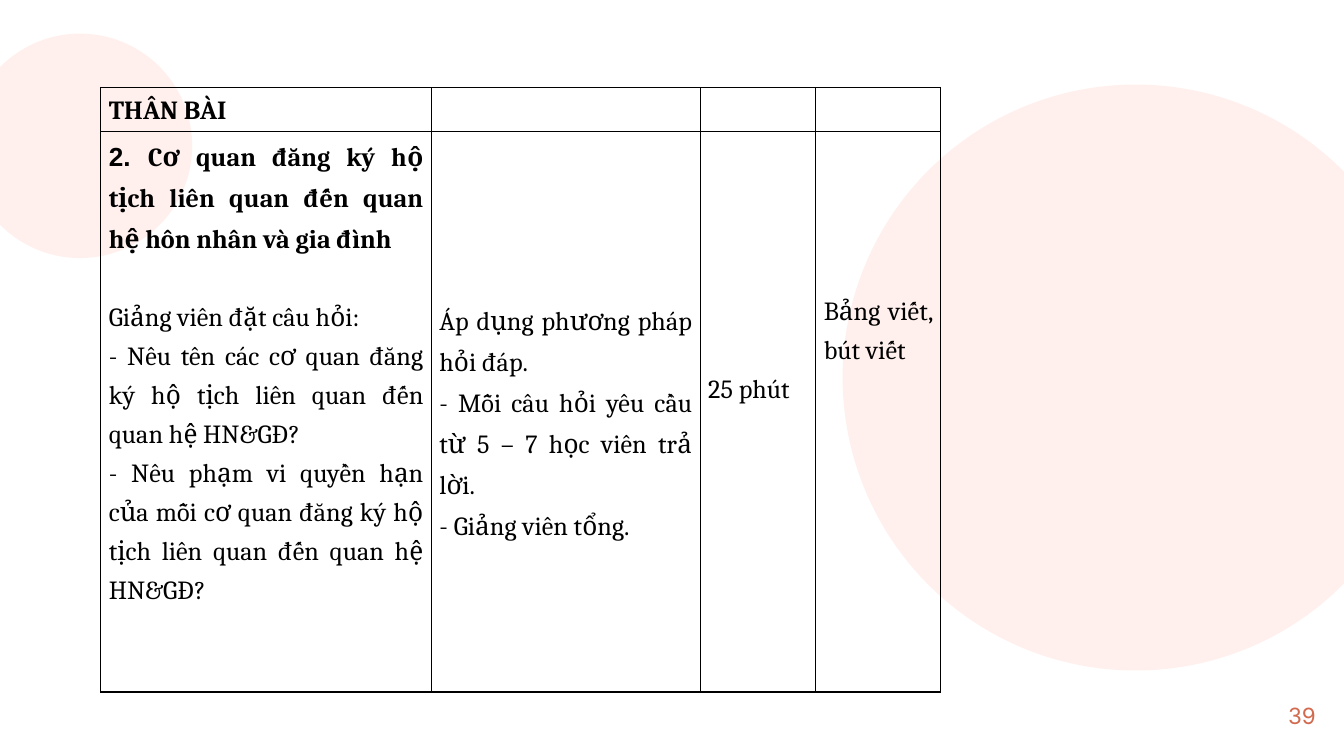
from lxml import etree
from pptx import Presentation
from pptx.dml.color import RGBColor
from pptx.enum.shapes import MSO_SHAPE
from pptx.enum.text import MSO_ANCHOR, PP_ALIGN
from pptx.oxml.ns import qn
from pptx.util import Inches, Pt

CHORD = MSO_SHAPE.CHORD
MIDDLE = MSO_ANCHOR.MIDDLE
RIGHT = PP_ALIGN.RIGHT
JUSTIFY = PP_ALIGN.JUSTIFY
EXACT = Pt(22)


def color(code):
    """Turn a hex string into a colour."""
    return RGBColor.from_string(code)


def write(para, text, size=14, font="Cambria", ink="000000", bold=False,
          align=JUSTIFY, line=1.3, before=0):
    """Add a formatted run to a paragraph."""
    para.alignment = align
    para.line_spacing = line
    para.space_before = Pt(before)
    run = para.add_run()
    run.text = text
    run.font.size = Pt(size)
    run.font.name = font
    run.font.bold = bold
    run.font.color.rgb = color(ink)


class Deck:
    """Hold the style and the current slide."""

    tint = "FFF0ED"
    accent = "D26A50"
    border = "000000"

    def __init__(self):
        """Start a wide deck with one blank slide."""
        self.file = Presentation()
        self.file.slide_width = Inches(10)
        self.file.slide_height = Inches(10) * 9 // 16
        self.slide = self.file.slides.add_slide(self.file.slide_layouts[6])

    def disc(self, left, top, size, turn=0):
        """Draw a circle cut flat at the slide edge."""
        shape = self.slide.shapes.add_shape(
            CHORD, Inches(left), Inches(top), Inches(size), Inches(size))
        shape.adjustments[0] = 26.74
        shape.adjustments[1] = 189.22
        shape.rotation = turn
        shape.shadow.inherit = False
        shape.fill.solid()
        shape.fill.fore_color.rgb = color(self.tint)
        shape.line.fill.background()

    def number(self, text):
        """Write the slide number."""
        box = self.slide.shapes.add_textbox(
            Inches(9.19), Inches(5.11), Inches(0.6), Inches(0.43))
        frame = box.text_frame
        frame.word_wrap = True
        frame.vertical_anchor = MIDDLE
        frame.margin_left = frame.margin_right = 0
        frame.margin_top = frame.margin_bottom = 0
        write(frame.paragraphs[0], text, size=12, font="Inter",
              ink=self.accent, align=RIGHT, line=1.0)

    def table(self, left, top, cols, rows):
        """Add a bordered table without fill."""
        grid = self.slide.shapes.add_table(
            len(rows), len(cols), Inches(left), Inches(top),
            Inches(sum(cols)), Inches(sum(rows))).table
        grid.first_row = grid.horz_banding = False
        for col, width in zip(grid.columns, cols):
            col.width = Inches(width)
        for row, height in zip(grid.rows, rows):
            row.height = Inches(height)
        for cell in grid.iter_cells():
            cell.margin_left = cell.margin_right = Inches(0.06)
            cell.margin_top = cell.margin_bottom = 0
            cell.fill.background()
            self.frame(cell)
        return grid

    def frame(self, cell):
        """Draw the four borders of a cell."""
        props = cell._tc.get_or_add_tcPr()
        for spot, side in enumerate(("lnL", "lnR", "lnT", "lnB")):
            edge = etree.Element(qn(f"a:{side}"), w=str(Pt(0.75)))
            fill = etree.SubElement(edge, qn("a:solidFill"))
            etree.SubElement(fill, qn("a:srgbClr"), val=self.border)
            props.insert(spot, edge)

    def fill(self, cell, paras, drop=0):
        """Write paragraphs of (text, format) runs below a top gap."""
        cell.margin_top = Inches(drop)
        frame = cell.text_frame
        for spot, runs in enumerate(paras):
            para = frame.add_paragraph() if spot else frame.paragraphs[0]
            for text, style in runs:
                write(para, text, **style)


def main():
    """Build the lesson plan slide."""
    deck = Deck()
    deck.disc(6.27, 0.63, 4.36)
    deck.disc(-0.24, 0.25, 1.67, turn=180)
    deck.number("39")

    grid = deck.table(0.75, 0.65, [2.46, 2, 0.86, 0.93], [0.33, 4.17])
    head = {"bold": True, "line": EXACT}
    fixed = {"line": EXACT}
    deck.fill(grid.cell(0, 0), [[("THÂN BÀI", {"bold": True})]])
    deck.fill(grid.cell(1, 0), [
        [("2. ", {**head, "font": "Arial"}),
         ("Cơ quan đăng ký hộ tịch liên quan đến quan hệ hôn nhân "
          "và gia đình", head)],
        [("Giảng viên đặt câu hỏi: ", {"before": 21})],
        [("- Nêu tên các cơ quan đăng ký hộ tịch liên quan đến "
          "quan hệ HN&GĐ?", {})],
        [("- Nêu phạm vi quyền hạn của mỗi cơ quan đăng ký hộ tịch "
          "liên quan đến quan hệ HN&GĐ? ", {})],
    ])
    deck.fill(grid.cell(1, 1), [
        [("Áp dụng phương pháp hỏi đáp. ", fixed)],
        [("- Mỗi câu hỏi yêu cầu từ 5 – 7 học viên trả lời.", fixed)],
        [("- Giảng viên tổng.", fixed)],
    ], drop=1.22)
    deck.fill(grid.cell(1, 2), [[("25 phút", {})]], drop=1.74)
    deck.fill(grid.cell(1, 3), [[("Bảng viết, bút viết", {})]], drop=1.16)
    deck.file.save("out.pptx")


if __name__ == "__main__":
    main()
